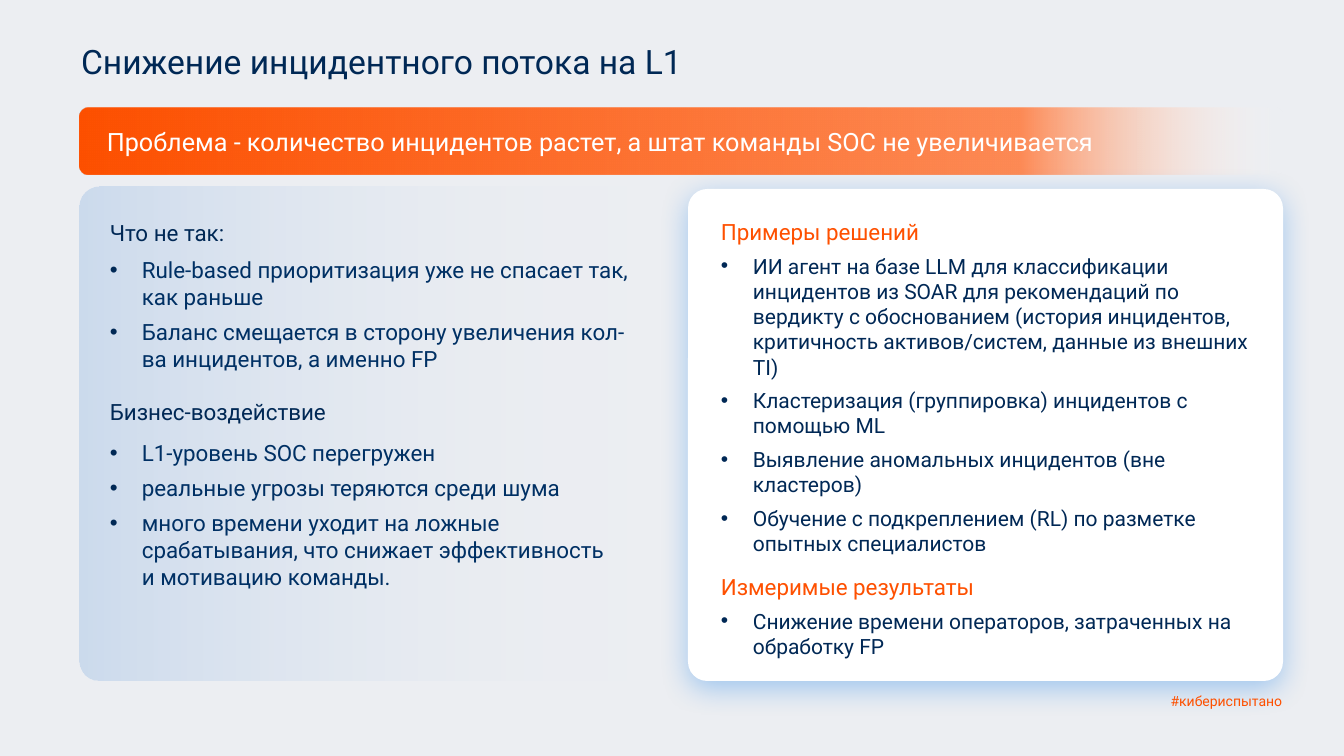
"""Build the slide on reducing the L1 incident flow."""
import dataclasses
import typing

import lxml.etree
import pptx
import pptx.dml.color
import pptx.enum.shapes
import pptx.enum.text
import pptx.oxml.ns
import pptx.util

ALIGN = pptx.enum.text.PP_ALIGN
qn = pptx.oxml.ns.qn


@dataclasses.dataclass(frozen=True)
class Theme:
    font: str = "Roboto"
    backdrop: str = "ECEEF2"
    navy: str = "002855"
    ink: str = "003064"
    orange: str = "FE5000"
    peach: str = "FE8A55"
    blue: str = "005FCC"
    glow: str = "2B8AEA"
    white: str = "FFFFFF"
    title: int = 24
    banner: int = 18
    body: int = 16
    detail: int = 15
    tag: int = 10


T = Theme()


class Stop(typing.NamedTuple):
    pos: int
    color: str
    alpha: int = 100


class Panel(typing.NamedTuple):
    box: tuple[int, int, int, int]
    radius: float
    stops: tuple[Stop, ...] = ()
    shadow: bool = False


class Block(typing.NamedTuple):
    box: tuple[int, int, int, int]
    heading: str = ""
    bullets: tuple[str, ...] = ()
    size: int = T.body
    color: str = T.navy
    bullet_size: int = T.body
    bullet_color: str = T.ink
    align: ALIGN = ALIGN.LEFT


PANELS = (
    Panel((80, 187, 592, 494), 0.04, (Stop(0, T.blue, 14), Stop(100, T.white, 0))),
    Panel((80, 108, 1203, 67), 0.133,
          (Stop(0, T.orange), Stop(78, T.peach), Stop(100, T.white, 0))),
    Panel((688, 189, 595, 492), 0.039, shadow=True),
)

BLOCKS = (
    Block((97, 121, 1195, 40),
          "Проблема - количество инцидентов растет, а штат команды SOC не увеличивается",
          size=T.banner, color=T.white),
    Block((100, 214, 318, 37), "Что не так:", align=ALIGN.JUSTIFY),
    Block((100, 251, 539, 127), bullets=(
        "Rule-based приоритизация уже не спасает так, как раньше",
        "Баланс смещается в сторону увеличения кол-ва инцидентов, а именно FP")),
    Block((100, 393, 318, 37), "Бизнес-воздействие", align=ALIGN.JUSTIFY),
    Block((100, 434, 521, 163), bullets=(
        "L1-уровень SOC перегружен",
        "реальные угрозы теряются среди шума",
        "много времени уходит на ложные срабатывания, что снижает эффективность "
        "и мотивацию команды.")),
    Block((711, 213, 550, 351), "Примеры решений", (
        "ИИ агент на базе LLM для классификации инцидентов из SOAR для рекомендаций "
        "по вердикту с обоснованием (история инцидентов, критичность активов/систем, "
        "данные из внешних TI)",
        "Кластеризация (группировка) инцидентов с помощью ML",
        "Выявление аномальных инцидентов (вне кластеров)",
        "Обучение с подкреплением (RL) по разметке опытных специалистов"),
        color=T.orange, bullet_size=T.detail, bullet_color=T.navy),
    Block((711, 568, 559, 100), "Измеримые результаты",
          ("Снижение времени операторов, затраченных на обработку FP",),
          color=T.orange, bullet_size=T.detail, bullet_color=T.navy),
    Block((1044, 688, 248, 27), "#кибериспытано",
          size=T.tag, color=T.orange, align=ALIGN.RIGHT),
)


def px(n: int) -> int:
    """Turn pixels into EMU."""
    return round(n * 12192000 / 1344)


def rgb(color: str) -> pptx.dml.color.RGBColor:
    """Return a hex colour as an RGBColor."""
    return pptx.dml.color.RGBColor.from_string(color)


def add_xml(parent, tag: str, **attrs):
    """Append a child element with the given attributes."""
    return lxml.etree.SubElement(parent, qn(tag), {k: str(v) for k, v in attrs.items()})


def add_color(parent, color: str, alpha: int) -> None:
    """Append a colour with an opacity in percent."""
    add_xml(add_xml(parent, "a:srgbClr", val=color), "a:alpha", val=alpha * 1000)


def apply(target, values: dict[str, typing.Any]) -> None:
    """Set attributes from a dict of format values."""
    for name, value in values.items():
        setattr(target, name, value)


def add_run(p, text: str, size: int, color: str) -> None:
    """Add a formatted run to a paragraph."""
    r = p.add_run()
    r.text = text
    apply(r.font, {"name": T.font, "size": pptx.util.Pt(size)})
    r.font.color.rgb = rgb(color)


def add_bullet(p) -> None:
    """Give a paragraph a hanging navy bullet."""
    pPr = p._p.get_or_add_pPr()
    apply_indent = {"marL": px(32), "indent": -px(32)}
    for name, value in apply_indent.items():
        pPr.set(name, str(value))
    add_xml(add_xml(pPr, "a:buClr"), "a:srgbClr", val=T.navy)
    add_xml(pPr, "a:buFont", typeface="Arial")
    add_xml(pPr, "a:buChar", char="•")


def draw_panel(s, panel: Panel) -> None:
    """Draw a rounded panel with a gradient or white fill."""
    sp = s.shapes.add_shape(pptx.enum.shapes.MSO_SHAPE.ROUNDED_RECTANGLE,
                            *map(px, panel.box))
    sp.adjustments[0] = panel.radius
    sp.shadow.inherit = False
    sp.line.fill.background()
    if panel.stops:
        sp.fill.gradient()
        sp.fill.gradient_angle = 0
        stops = sp._element.spPr.find(".//" + qn("a:gsLst"))
        stops.clear()
        for stop in panel.stops:
            add_color(add_xml(stops, "a:gs", pos=stop.pos * 1000), stop.color, stop.alpha)
    else:
        sp.fill.solid()
        sp.fill.fore_color.rgb = rgb(T.white)
    if panel.shadow:
        effects = sp._element.spPr.find(qn("a:effectLst"))
        shadow = add_xml(effects, "a:outerShdw", blurRad=pptx.util.Pt(21.3),
                         dist=pptx.util.Pt(5.2), dir=5400000, algn="t", rotWithShape=0)
        add_color(shadow, T.glow, 40)


def draw_block(s, block: Block) -> None:
    """Draw a text box with an optional heading and bullets."""
    tf = s.shapes.add_textbox(*map(px, block.box)).text_frame
    tf.word_wrap = True
    lines = [(block.heading, False)] if block.heading else []
    lines += [(text, True) for text in block.bullets]
    for i, (text, bulleted) in enumerate(lines):
        p = tf.add_paragraph() if i else tf.paragraphs[0]
        apply(p, {"alignment": block.align, "space_after": pptx.util.Pt(6)})
        if bulleted:
            add_bullet(p)
            add_run(p, text, block.bullet_size, block.bullet_color)
        else:
            add_run(p, text, block.size, block.color)


def draw_title(s, text: str) -> None:
    """Place and format the title placeholder."""
    sp = s.shapes.title
    apply(sp, dict(zip(("left", "top", "width", "height"), map(px, (71, 40, 1043, 67)))))
    tf = sp.text_frame
    apply(tf, {"word_wrap": True,
               "auto_size": pptx.enum.text.MSO_AUTO_SIZE.NONE,
               "vertical_anchor": pptx.enum.text.MSO_ANCHOR.TOP})
    p = tf.paragraphs[0]
    apply(p, {"alignment": ALIGN.LEFT, "line_spacing": 0.9})
    add_run(p, text, T.title, T.navy)


def main() -> None:
    """Build and save the presentation."""
    prs = pptx.Presentation()
    apply(prs, {"slide_width": px(1344), "slide_height": px(756)})
    s = prs.slides.add_slide(prs.slide_layouts.get_by_name("Title Only"))
    s.background.fill.solid()
    s.background.fill.fore_color.rgb = rgb(T.backdrop)
    draw_title(s, "Снижение инцидентного потока на L1")
    for panel in PANELS:
        draw_panel(s, panel)
    for block in BLOCKS:
        draw_block(s, block)
    prs.save("out.pptx")


if __name__ == "__main__":
    main()
